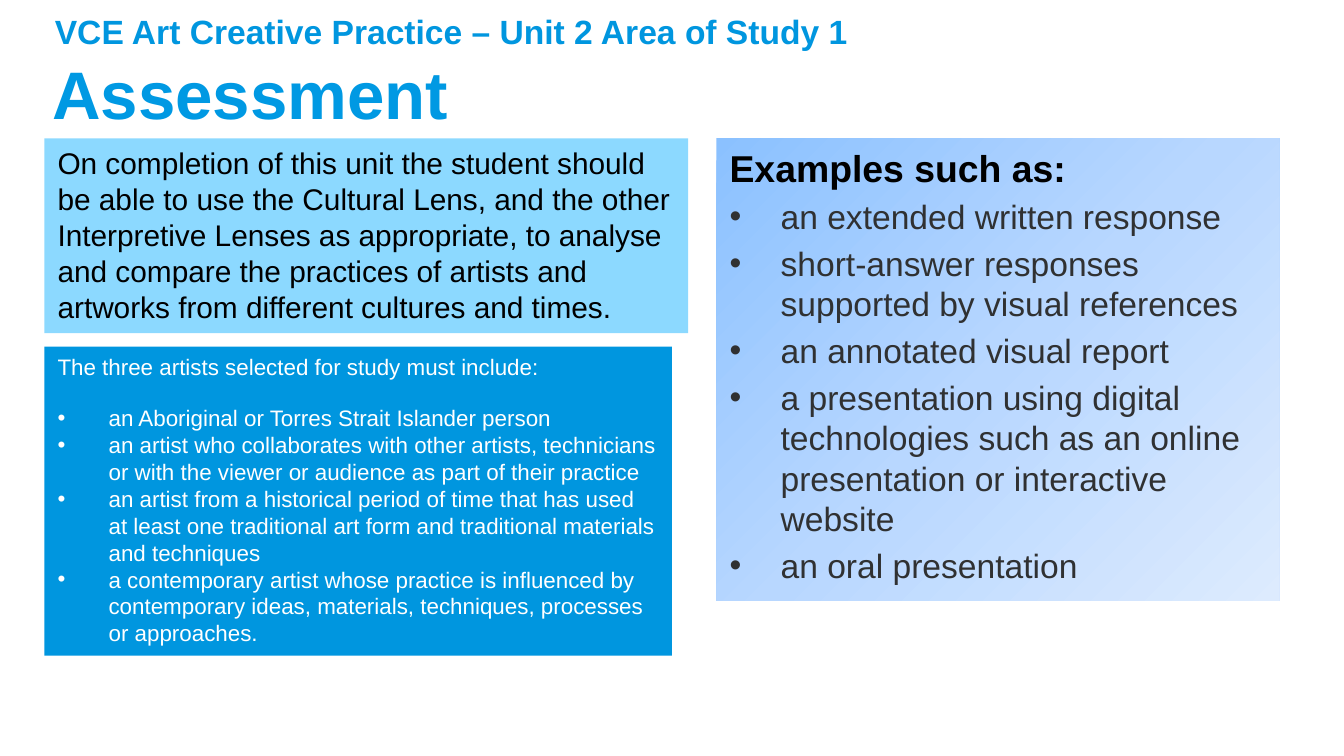
from copy import deepcopy

from lxml import etree
from pptx import Presentation
from pptx import util as u
from pptx.dml.color import RGBColor
from pptx.enum import shapes, text
from pptx.oxml.ns import qn

BLUE = RGBColor(0x00, 0x96, 0xDF)
TITLE_BLUE = RGBColor(0x00, 0x99, 0xE3)
LIGHT_BLUE = RGBColor(0x8C, 0xD9, 0xFF)
BLACK = RGBColor(0x00, 0x00, 0x00)
WHITE = RGBColor(0xFF, 0xFF, 0xFF)
DARK_GREY = RGBColor(0x30, 0x31, 0x32)
GRADIENT = [
    (0, RGBColor(0x8B, 0xC1, 0xFF)),
    (0.5, RGBColor(0xB8, 0xD7, 0xFF)),
    (1, RGBColor(0xDD, 0xEB, 0xFE)),
]


class SlideBuilder:
    font = "Arial"
    indent = u.Inches(0.38)
    tab = u.Inches(0.3)

    def __init__(self, s):
        self.s = s

    def _frame(self, sp, anchor):
        tf = sp.text_frame
        tf.word_wrap = True
        tf.vertical_anchor = anchor
        return tf

    def label(self, x, y, w, h, anchor=text.MSO_ANCHOR.TOP):
        sp = self.s.shapes.add_textbox(*map(u.Inches, (x, y, w, h)))
        return self._frame(sp, anchor)

    def panel(self, x, y, w, h, fill):
        """Add a rectangle filled with one colour or a list of gradient stops."""
        sp = self.s.shapes.add_shape(
            shapes.MSO_SHAPE.RECTANGLE, *map(u.Inches, (x, y, w, h)))
        sp.shadow.inherit = False
        sp.line.fill.background()
        if isinstance(fill, list):
            self._gradient(sp.fill, fill)
        else:
            sp.fill.solid()
            sp.fill.fore_color.rgb = fill
        return self._frame(sp, text.MSO_ANCHOR.TOP)

    def _gradient(self, fill, stops):
        fill.gradient()
        fill.gradient_angle = 315
        first = fill.gradient_stops[0]._gs
        for _ in stops[2:]:
            first.addnext(deepcopy(first))
        for stop, (position, color) in zip(fill.gradient_stops, stops):
            stop.position = position
            stop.color.rgb = color

    def paragraph(self, tf, words, size, color, bold=False, before=0, after=0,
                  bullet=False):
        p = tf.paragraphs[0]
        if p.runs:
            p = tf.add_paragraph()
        p.alignment = text.PP_ALIGN.LEFT
        p.space_before = u.Pt(before)
        p.space_after = u.Pt(after)
        if bullet:
            self._bullet(p)
        r = p.add_run()
        r.text = words
        r.font.name = self.font
        r.font.size = u.Pt(size)
        r.font.bold = bold
        r.font.color.rgb = color

    def _bullet(self, p):
        pPr = p._p.get_or_add_pPr()
        pPr.set("marL", str(self.indent))
        pPr.set("indent", str(-self.indent))
        etree.SubElement(pPr, qn("a:buFont"), typeface=self.font)
        etree.SubElement(pPr, qn("a:buChar"), char="•")
        tabs = etree.SubElement(pPr, qn("a:tabLst"))
        etree.SubElement(tabs, qn("a:tab"), pos=str(self.tab), algn="l")


def main():
    # Widescreen 16:9 slide
    prs = Presentation()
    prs.slide_width = u.Inches(10)
    prs.slide_height = u.Inches(10) * 9 // 16
    b = SlideBuilder(prs.slides.add_slide(prs.slide_layouts[6]))

    # Headings
    tf = b.label(0.29, 0.22, 9.45, 0.94, text.MSO_ANCHOR.MIDDLE)
    b.paragraph(tf, "Assessment", 36, TITLE_BLUE, bold=True)
    tf = b.label(0.31, 0.03, 7.59, 0.4)
    b.paragraph(tf, "VCE Art Creative Practice – Unit 2 Area of Study 1",
                18, BLUE, bold=True)

    # Assessment examples
    tf = b.panel(5.33, 1.03, 4.19, 3.44, GRADIENT)
    b.paragraph(tf, "Examples such as:", 20, BLACK, bold=True)
    examples = [
        "an extended written response",
        "short-answer responses supported by visual references",
        "an annotated visual report",
        "a presentation using digital technologies such as an online "
        "presentation or interactive website",
        "an oral presentation",
    ]
    for i, example in enumerate(examples):
        b.paragraph(tf, example, 18, DARK_GREY, before=3.6 if i else 3,
                    bullet=True)

    # Unit outcome
    tf = b.panel(0.33, 1.03, 4.79, 1.45, LIGHT_BLUE)
    b.paragraph(
        tf,
        "On completion of this unit the student should be able to use the "
        "Cultural Lens, and the other Interpretive Lenses as appropriate, to "
        "analyse and compare the practices of artists and artworks from "
        "different cultures and times.", 16, BLACK)

    # Artist selection
    tf = b.panel(0.33, 2.58, 4.67, 2.3, BLUE)
    b.paragraph(tf, "The three artists selected for study must include:",
                12, WHITE, after=10)
    artists = [
        "an Aboriginal or Torres Strait Islander person",
        "an artist who collaborates with other artists, technicians or with "
        "the viewer or audience as part of their practice",
        "an artist from a historical period of time that has used at least "
        "one traditional art form and traditional materials and techniques",
        "a contemporary artist whose practice is influenced by contemporary "
        "ideas, materials, techniques, processes or approaches.",
    ]
    for i, artist in enumerate(artists):
        b.paragraph(tf, artist, 12, WHITE, before=0 if i else 3, bullet=True)

    prs.save("out.pptx")


if __name__ == "__main__":
    main()
